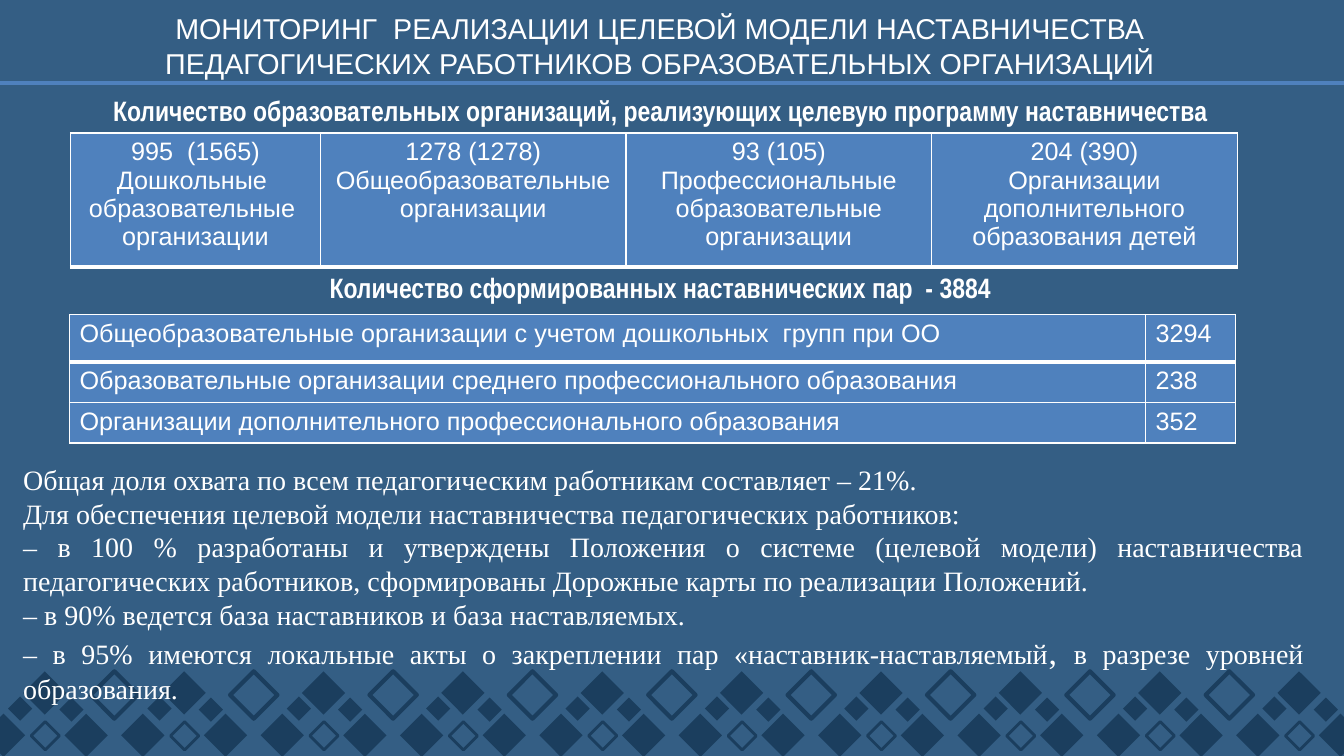
from dataclasses import dataclass

from lxml import etree
from pptx import Presentation
from pptx.dml.color import RGBColor
from pptx.enum.shapes import MSO_CONNECTOR, MSO_SHAPE
from pptx.enum.text import MSO_ANCHOR, MSO_AUTO_SIZE, PP_ALIGN
from pptx.oxml.ns import qn
from pptx.util import Inches, Pt

DIAMOND = MSO_SHAPE.DIAMOND
STRAIGHT = MSO_CONNECTOR.STRAIGHT
TOP, NO_FIT = MSO_ANCHOR.TOP, MSO_AUTO_SIZE.NONE
LEFT, CENTER, JUSTIFY = PP_ALIGN.LEFT, PP_ALIGN.CENTER, PP_ALIGN.JUSTIFY
SLIDE_WIDTH, SLIDE_HEIGHT = Inches(13.34), Inches(7.5)


@dataclass(frozen=True)
class Theme:
    background: str = "345E84"
    ornament: str = "1B3E5E"
    accent: str = "4F81BD"
    text: str = "FFFFFF"
    sans: str = "Arial"
    narrow: str = "Arial Narrow"
    serif: str = "Times New Roman"
    title_size: float = 20.5
    body_size: float = 20
    comma_size: float = 24
    table_size: float = 18
    thin: float = 1
    thick: float = 3


@dataclass(frozen=True)
class Area:
    """A rectangle in percent of the slide's width and height."""
    left: float
    top: float
    width: float
    height: float

    def box(self) -> tuple[int, int, int, int]:
        return across(self.left), down(self.top), across(self.width), down(self.height)


@dataclass(frozen=True)
class Diamond:
    """One diamond of the repeated ornament; outline 0 means a filled one."""
    left: float
    top: float
    size: float
    outline: float = 0
    repeats: int = 10


@dataclass(frozen=True)
class Run:
    text: str
    size: float


@dataclass(frozen=True)
class Grid:
    left: float
    top: float
    columns: tuple[float, ...]
    rows: tuple[float, ...]
    cells: tuple[tuple[tuple[str, ...], ...], ...]
    align: PP_ALIGN


THEME = Theme()
ORNAMENT_STEP = 10.37
ORNAMENT = (
    Diamond(-1.35, 94.4, 3.22),
    Diamond(2.32, 95.47, 2.1, outline=2),
    Diamond(1.72, 88.8, 3.22),
    Diamond(4.8, 94.4, 3.22),
    Diamond(0.6, 92.13, 1.8),
    Diamond(4.42, 92.27, 1.8),
    Diamond(6.75, 88.8, 3.52, outline=3, repeats=9),
)
TITLE = ("МОНИТОРИНГ  РЕАЛИЗАЦИИ ЦЕЛЕВОЙ МОДЕЛИ НАСТАВНИЧЕСТВА "
         "ПЕДАГОГИЧЕСКИХ РАБОТНИКОВ ОБРАЗОВАТЕЛЬНЫХ ОРГАНИЗАЦИЙ")
CAPTIONS = {
    11.73: "Количество образовательных организаций, реализующих целевую программу наставничества",
    35.07: "Количество сформированных наставнических пар  - 3884",
}
ORGANISATIONS = Grid(5.25, 17.6, (18.59, 22.74, 22.74, 22.74), (17.73,), ((
    ("995  (1565)", "Дошкольные ", "образовательные ", "организации"),
    ("1278 (1278) Общеобразовательные организации",),
    ("93 (105)", "Профессиональные образовательные организации"),
    ("204 (390)", "Организации дополнительного образования детей"),
),), CENTER)
PAIRS = Grid(5.17, 41.6, (80.06, 6.67), (6.27, 5.4, 5.33), (
    (("Общеобразовательные организации с учетом дошкольных  групп при ОО",), ("3294",)),
    (("Образовательные организации среднего профессионального образования",), ("238",)),
    (("Организации дополнительного профессионального образования",), ("352",)),
), LEFT)
RESULTS = (
    "Общая доля охвата по всем педагогическим работникам составляет – 21%.",
    "Для обеспечения целевой модели наставничества педагогических работников: ",
    "– в 100 % разработаны и утверждены Положения о системе (целевой модели) наставничества "
    "педагогических работников, сформированы Дорожные карты по реализации Положений. ",
    "– в 90% ведется база наставников и база наставляемых.",
    (Run("– в 95% имеются локальные акты о закреплении пар «наставник-наставляемый", THEME.body_size),
     Run(", ", THEME.comma_size),
     Run("в разрезе уровней образования.", THEME.body_size)),
)


def across(share: float) -> int:
    return round(SLIDE_WIDTH * share / 100)


def down(share: float) -> int:
    return round(SLIDE_HEIGHT * share / 100)


def rgb(color: str) -> RGBColor:
    return RGBColor.from_string(color)


def write(frame, paragraphs, *, size: float, font: str = THEME.sans, color: str = THEME.text,
          bold: bool = False, align: PP_ALIGN = LEFT, spacing: float = 1) -> None:
    """Fill a text frame; a paragraph is a string or a tuple of runs."""
    frame.word_wrap = True
    for index, content in enumerate(paragraphs):
        paragraph = frame.paragraphs[0] if index == 0 else frame.add_paragraph()
        paragraph.alignment = align
        paragraph.line_spacing = spacing
        paragraph.space_before = Pt(0)
        for part in (Run(content, size),) if isinstance(content, str) else content:
            run = paragraph.add_run()
            run.text = part.text
            run.font.name, run.font.size, run.font.bold = font, Pt(part.size), bold
            run.font.color.rgb = rgb(color)


def place(placeholder, area: Area) -> None:
    placeholder.left, placeholder.top, placeholder.width, placeholder.height = area.box()
    placeholder.text_frame.vertical_anchor = TOP
    placeholder.text_frame.auto_size = NO_FIT


def remove_bullets(frame) -> None:
    for paragraph in frame.paragraphs:
        properties = paragraph._p.get_or_add_pPr()
        properties.set("marL", "0")
        properties.set("indent", "0")
        etree.SubElement(properties, qn("a:buNone"))


def draw_ornament(slide) -> None:
    """Draw the diamond border behind the placeholders."""
    border = slide.shapes.add_group_shape()
    for item in ORNAMENT:
        for step in range(item.repeats):
            side = across(item.size)
            diamond = border.shapes.add_shape(
                DIAMOND, across(item.left + step * ORNAMENT_STEP), down(item.top), side, side)
            diamond.shadow.inherit = False
            if item.outline:
                diamond.fill.background()
                diamond.line.color.rgb = rgb(THEME.ornament)
                diamond.line.width = Pt(item.outline)
            else:
                diamond.fill.solid()
                diamond.fill.fore_color.rgb = rgb(THEME.ornament)
                diamond.line.fill.background()
    slide.shapes.title.element.addprevious(border.element)


def draw_rule(slide, top: float) -> None:
    rule = slide.shapes.add_connector(STRAIGHT, 0, down(top), SLIDE_WIDTH, down(top))
    rule.line.color.rgb = rgb(THEME.accent)
    rule.line.width = Pt(THEME.thick)
    etree.SubElement(rule.element.spPr, qn("a:effectLst"))


def set_borders(cell, widths: dict[str, float]) -> None:
    properties = cell._tc.get_or_add_tcPr()
    for index, (side, width) in enumerate(widths.items()):
        border = etree.Element(qn(f"a:{side}"), w=str(Pt(width)))
        fill = etree.SubElement(border, qn("a:solidFill"))
        etree.SubElement(fill, qn("a:srgbClr"), val=THEME.text)
        properties.insert(index, border)


def draw_table(slide, grid: Grid) -> None:
    area = Area(grid.left, grid.top, sum(grid.columns), sum(grid.rows))
    table = slide.shapes.add_table(len(grid.rows), len(grid.columns), *area.box()).table
    table.horz_banding = False
    for column, share in zip(table.columns, grid.columns):
        column.width = across(share)
    for row, share in zip(table.rows, grid.rows):
        row.height = down(share)
    for r, texts in enumerate(grid.cells):
        above = THEME.thick if r == 1 else THEME.thin
        below = THEME.thick if r == 0 else THEME.thin
        for c, paragraphs in enumerate(texts):
            cell = table.cell(r, c)
            cell.fill.solid()
            cell.fill.fore_color.rgb = rgb(THEME.accent)
            set_borders(cell, {"lnL": THEME.thin, "lnR": THEME.thin, "lnT": above, "lnB": below})
            write(cell.text_frame, paragraphs, size=THEME.table_size, align=grid.align)


def main() -> None:
    deck = Presentation()
    deck.slide_width, deck.slide_height = SLIDE_WIDTH, SLIDE_HEIGHT
    slide = deck.slides.add_slide(deck.slide_layouts[1])
    slide.background.fill.solid()
    slide.background.fill.fore_color.rgb = rgb(THEME.background)
    draw_ornament(slide)
    draw_rule(slide, 10.93)

    title, results = slide.shapes.title, slide.placeholders[1]
    place(title, Area(3.9, 0.8, 90.48, 10))
    write(title.text_frame, [TITLE], size=THEME.title_size, align=CENTER)
    for top, caption in CAPTIONS.items():
        heading = slide.shapes.add_textbox(*Area(5.17, top, 87.93, 5.87).box())
        write(heading.text_frame, [caption], size=THEME.body_size, font=THEME.narrow,
              bold=True, align=CENTER)
    draw_table(slide, ORGANISATIONS)
    draw_table(slide, PAIRS)
    place(results, Area(0.97, 60.53, 96.78, 33.6))
    write(results.text_frame, RESULTS, size=THEME.body_size, font=THEME.serif, align=JUSTIFY)
    remove_bullets(results.text_frame)


    deck.save("out.pptx")


if __name__ == "__main__":
    main()
